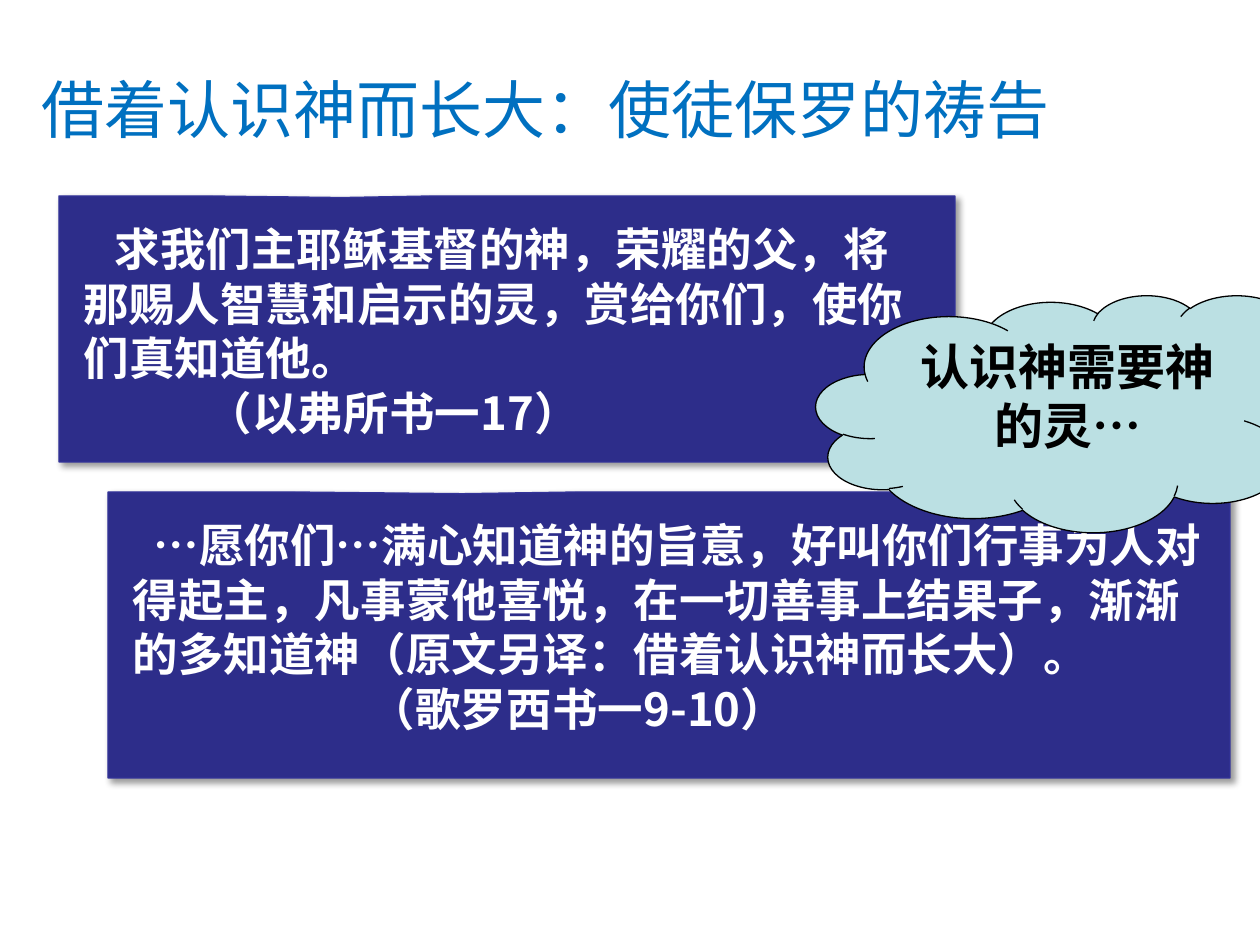
from pptx import Presentation
from pptx import util as u
from pptx.dml.color import RGBColor
from pptx.enum import lang, shapes, text
from pptx.oxml import parse_xml
from pptx.oxml.ns import nsdecls

PX = 914400 / 126
TITLE_BLUE = RGBColor(0x00, 0x70, 0xC0)
NAVY = RGBColor(0x2D, 0x2D, 0x8A)
NAVY_EDGE = RGBColor(0x33, 0x33, 0x99)
CLOUD_BLUE = RGBColor(0xBB, 0xE0, 0xE3)
WHITE = RGBColor(0xFF, 0xFF, 0xFF)
BLACK = RGBColor(0x00, 0x00, 0x00)
CJK = "Noto Sans CJK SC"


def write(p, words, size, color, font=CJK, bold=False, indent=0, align=text.PP_ALIGN.LEFT):
    p.alignment = align
    p._p.get_or_add_pPr().set("indent", str(round(indent * PX)))
    r = p.add_run()
    r.text = words
    r.font.name, r.font.size, r.font.bold = font, u.Pt(size), bold
    r.font.color.rgb = color
    r.font.language_id = lang.MSO_LANGUAGE_ID.SIMPLIFIED_CHINESE
    r._r.get_or_add_rPr().append(parse_xml(f'<a:ea {nsdecls("a")} typeface="{CJK}"/>'))


def add_callout(s, kind, box, adjustments, fill, line):
    sp = s.shapes.add_shape(kind, *[round(v * PX) for v in box])
    sp.adjustments[0], sp.adjustments[1] = adjustments
    sp.shadow.inherit = False
    sp.fill.solid()
    sp.fill.fore_color.rgb = fill
    sp.line.color.rgb = line
    sp.line.width = u.Pt(0.75)
    sp.text_frame.word_wrap = True
    sp.text_frame.vertical_anchor = text.MSO_ANCHOR.TOP
    return sp


prs = Presentation()
prs.slide_width, prs.slide_height = u.Inches(10), u.Inches(7.5)
s = prs.slides.add_slide(prs.slide_layouts[5])

title = s.shapes.title
title.left, title.top, title.width, title.height = [round(v * PX) for v in (29, 29, 1134, 158)]
title.text_frame.auto_size = text.MSO_AUTO_SIZE.NONE
title.text_frame.vertical_anchor = text.MSO_ANCHOR.MIDDLE
write(title.text_frame.paragraphs[0], "借着认识神而长大：使徒保罗的祷告", 36, TITLE_BLUE, font="Arial")

verses = [
    ((59, 196, 896, 266),
     ("求我们主耶稣基督的神，荣耀的父，将那赐人智慧和启示的灵，赏给你们，使你们真知道他。", 31),
     ("（以弗所书一17）", 123)),
    ((108, 492, 1122, 286),
     ("…愿你们…满心知道神的旨意，好叫你们行事为人对得起主，凡事蒙他喜悦，在一切善事上结果子，"
      "渐渐的多知道神（原文另译：借着认识神而长大）。", 21),
     ("（歌罗西书一9-10）", 237)),
]
for box, verse, reference in verses:
    sp = add_callout(s, shapes.MSO_SHAPE.RECTANGULAR_CALLOUT, box, (-0.184, -0.494), NAVY, NAVY_EDGE)
    effects = sp._element.spPr.find("{http://schemas.openxmlformats.org/drawingml/2006/main}effectLst")
    effects.append(parse_xml(
        f'<a:outerShdw {nsdecls("a")} blurRad="{u.Pt(4)}" dist="{u.Pt(3)}" dir="2700000" algn="tl" '
        'rotWithShape="0"><a:srgbClr val="000000"><a:alpha val="40000"/></a:srgbClr></a:outerShdw>'))
    tf = sp.text_frame
    tf.margin_left = tf.margin_top = tf.margin_right = tf.margin_bottom = round(25 * PX)
    for p, (words, indent) in zip((tf.paragraphs[0], tf.add_paragraph()), (verse, reference)):
        write(p, words, 26, WHITE, bold=True, indent=indent)

cloud = add_callout(s, shapes.MSO_SHAPE.CLOUD_CALLOUT, (816, 295, 542, 237), (0.405, 0.361),
                    CLOUD_BLUE, BLACK)
write(cloud.text_frame.paragraphs[0], "认识神需要神的灵…", 28, BLACK, font="Arial", bold=True,
      align=text.PP_ALIGN.CENTER)

prs.save("out.pptx")
